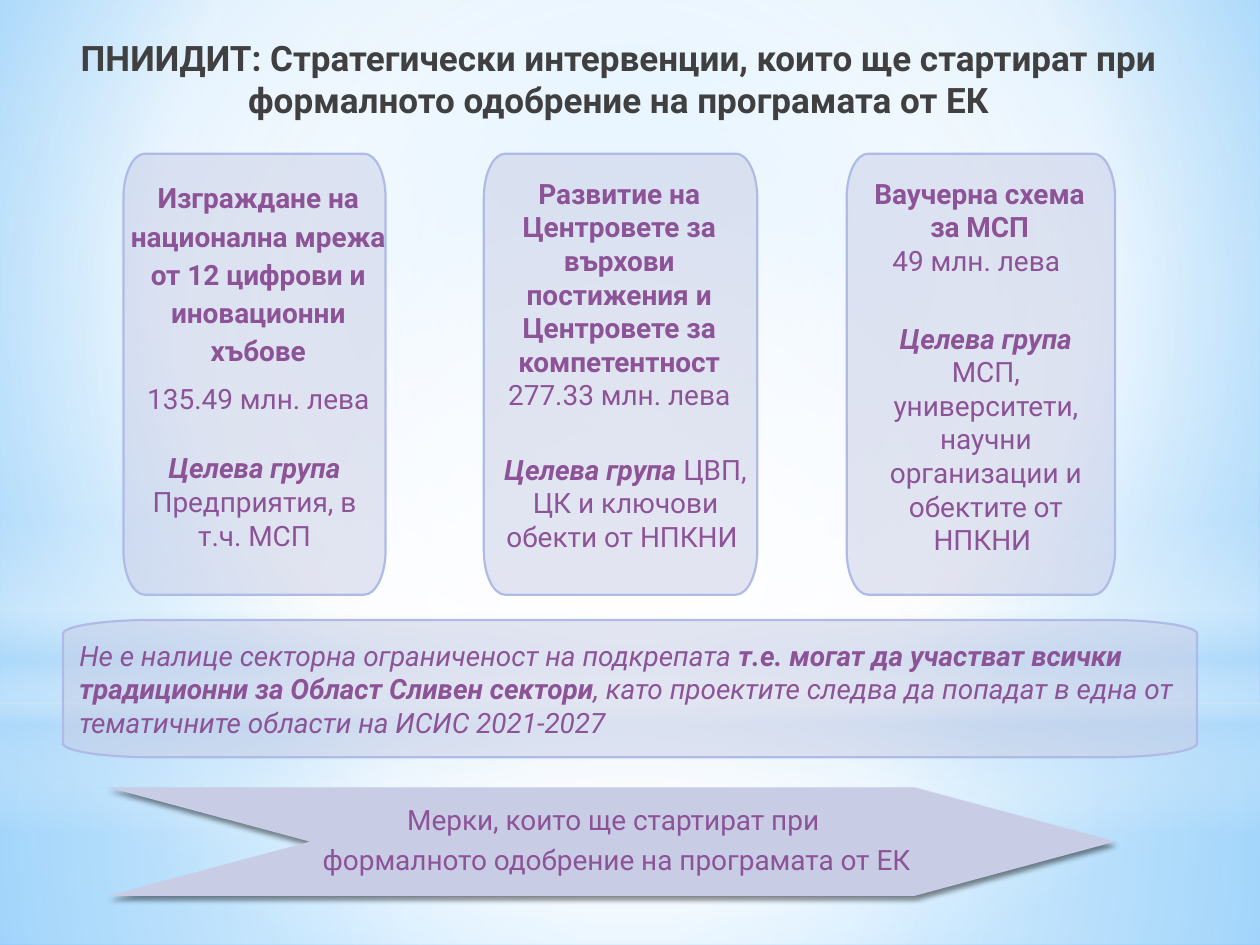
import pptx
import pptx.util
import pptx.dml.color
import pptx.enum.shapes
import pptx.enum.text
import pptx.oxml
import pptx.oxml.ns

Inches, Pt = pptx.util.Inches, pptx.util.Pt
SHAPE = pptx.enum.shapes.MSO_SHAPE
ALIGN = pptx.enum.text.PP_ALIGN
ANCHOR = pptx.enum.text.MSO_ANCHOR
AUTO = pptx.enum.text.MSO_AUTO_SIZE

COLORS = {"title": "404040", "text": "8D5397", "panel": "C8CDE5", "border": "AFBBE6",
          "white": "FFFFFF", "sky": "B4DCFA", "light": "9ED5FF", "deep": "5BB9FF",
          "shadow": "000000"}
FONT = "Roboto"
CENTER = (50, 50, 50, 50)
CURVE = 0.55

BACKGROUND = [(0, "light", 100), (60, "white", 100), (100, "deep", 100)]
GLOWS = [
    (SHAPE.RECTANGLE, (0, 5.58, 10, 1.92),
     [(0, "white", 91), (37, "white", 76), (100, "sky", 79)], CENTER),
    (SHAPE.RECTANGLE, (0, 0, 10, 5.58),
     [(0, "white", 89), (48, "white", 62), (100, "sky", 79)], CENTER),
    (SHAPE.RECTANGLE, (0, 4.12, 10, 2.5),
     [(0, "white", 0), (29, "white", 30), (45, "sky", 40), (55, "white", 26),
      (65, "sky", 60), (100, "white", 0)], None),
    (SHAPE.OVAL, (0, 1.75, 10, 5.58), [(0, "white", 100), (56, "white", 0)], CENTER),
]

TITLE = ("ПНИИДИТ: Стратегически интервенции, които ще стартират при "
         "формалното одобрение на програмата от ЕК")
CARD_TOP, CARD_HEIGHT = 1.22, 3.5
CARDS = [
    {"left": 0.98, "width": 2.08, "spacing": 1.14, "after": 5.6,
     "name": "Изграждане на национална мрежа от 12 цифрови и иновационни хъбове",
     "budget": "135.49 млн. лева", "name_box": (0.86, 1.35, 2.38, 2.04),
     "group": "Предприятия, в т.ч. МСП", "group_box": (0.98, 3.53, 2.08, 0.91)},
    {"left": 3.84, "width": 2.17, "spacing": 1, "after": 0,
     "name": "Развитие на Центровете за върхови постижения и Центровете за компетентност",
     "budget": "277.33 млн. лева", "name_box": (3.83, 1.35, 2.17, 1.99),
     "group": "ЦВП, ЦК и ключови обекти от НПКНИ ", "group_box": (3.88, 3.54, 2.17, 1.18)},
    {"left": 6.72, "width": 2.13, "spacing": 1, "after": 0,
     "name": "Ваучерна схема за МСП",
     "budget": "49 млн. лева ", "name_box": (6.83, 1.35, 1.89, 0.91),
     "group": "МСП, университети, научни организации и обектите от НПКНИ ",
     "group_box": (6.76, 2.5, 2.13, 1.99)},
]
GROUP_LABEL = "Целева група "
NOTE = [("Не е налице секторна ограниченост на подкрепата ", False, True),
        ("т.е. могат да участват всички традиционни за Област Сливен сектори", True, True),
        (", като проектите следва да попадат в една от тематичните области на ИСИС 2021-2027",
         False, True)]
ARROW_LINES = ["Мерки, които ще стартират при ", "формалното одобрение на програмата от ЕК"]
ARROW = [(0.86, 6.25), (7.26, 6.25), (8.85, 6.68), (7.26, 7.11), (0.86, 7.11), (2.46, 6.68)]


def color(name):
    return pptx.dml.color.RGBColor.from_string(COLORS[name])


def drawing(xml):
    tag, rest = xml[1:].split(">", 1)
    closed = "/" if tag.endswith("/") else ""
    return pptx.oxml.parse_xml(
        f'<{tag.rstrip("/")} {pptx.oxml.ns.nsdecls("a")}{closed}>{rest}')


def replace_solid(parent, stops, focus):
    stop_xml = "".join(
        f'<a:gs pos="{place * 1000}"><a:srgbClr val="{COLORS[name]}">'
        f'<a:alpha val="{alpha * 1000}"/></a:srgbClr></a:gs>' for place, name, alpha in stops)
    if focus:
        left, top, right, bottom = (side * 1000 for side in focus)
        direction = (f'<a:path path="circle"><a:fillToRect l="{left}" t="{top}" '
                     f'r="{right}" b="{bottom}"/></a:path>')
    else:
        direction = '<a:lin ang="5400000" scaled="0"/>'
    parent.replace(parent.find(pptx.oxml.ns.qn("a:solidFill")), drawing(
        f'<a:gradFill rotWithShape="1"><a:gsLst>{stop_xml}</a:gsLst>{direction}</a:gradFill>'))


def add_outline(page, points):
    corners = [(Inches(x), Inches(y)) for x, y in points]
    builder = page.shapes.build_freeform(*corners[0], scale=1.0)
    builder.add_line_segments(corners[1:], close=True)
    shape = builder.convert_to_shape()
    shape.shadow.inherit = False
    shape.fill.solid()
    shape.fill.fore_color.rgb = color("panel")
    return shape


def add_panel(page, left, top, width, height, radius_x, radius_y):
    right, bottom = left + width, top + height
    points = [(left, top + radius_y), (left + radius_x, top),
              (right - radius_x, top), (right, top + radius_y),
              (right, bottom - radius_y), (right - radius_x, bottom),
              (left + radius_x, bottom), (left, bottom - radius_y)]
    panel = add_outline(page, points)
    lines = panel.element.xpath(".//a:path/a:lnTo")
    corners = [(left, top), (right, top), (right, bottom), (left, bottom)]
    for index, corner in enumerate(corners):
        start, end = points[2 * index], points[2 * index + 1]
        controls = [tuple(a + CURVE * (c - a) for a, c in zip(point, corner))
                    for point in (start, end)]
        point_xml = "".join(f'<a:pt x="{Inches(x - left)}" y="{Inches(y - top)}"/>'
                            for x, y in controls + [end])
        line = lines[2 * index]
        line.getparent().replace(line, drawing(f"<a:cubicBezTo>{point_xml}</a:cubicBezTo>"))
    fill_color = panel.element.spPr.find(pptx.oxml.ns.qn("a:solidFill"))[0]
    fill_color.append(drawing('<a:alpha val="50000"/>'))
    panel.line.color.rgb = color("border")
    panel.line.width = Pt(1.25)
    return panel


def write(frame, paragraphs, align=ALIGN.CENTER, spacing=1, after=0, size=16, tint="text"):
    frame.word_wrap = True
    for index, spans in enumerate(paragraphs):
        para = frame.add_paragraph() if index else frame.paragraphs[0]
        para.alignment = align
        para.line_spacing = spacing
        para.space_before = Pt(0)
        para.space_after = Pt(after)
        for text, bold, italic in spans:
            span = para.add_run()
            span.text = text
            span.font.name = FONT
            span.font.size = Pt(size)
            span.font.bold = bold
            span.font.italic = italic
            span.font.color.rgb = color(tint)


def set_margins(frame, left, top, right, bottom):
    frame.margin_left, frame.margin_top = Inches(left), Inches(top)
    frame.margin_right, frame.margin_bottom = Inches(right), Inches(bottom)
    frame.vertical_anchor = ANCHOR.MIDDLE


def add_text(page, place, paragraphs, **style):
    box = page.shapes.add_textbox(*map(Inches, place))
    write(box.text_frame, paragraphs, **style)
    box.text_frame.auto_size = AUTO.SHAPE_TO_FIT_TEXT


def add_backdrop(deck, page):
    page.background.fill.solid()
    page.background.fill.fore_color.rgb = color("white")
    replace_solid(page.element.xpath("./p:cSld/p:bg/p:bgPr")[0], BACKGROUND, (20, 10, 20, 60))
    master_tree = deck.slide_master.element.xpath("./p:cSld/p:spTree")[0]
    for index, (kind, place, stops, focus) in enumerate(GLOWS):
        glow = page.shapes.add_shape(kind, *map(Inches, place))
        glow.shadow.inherit = False
        glow.line.fill.background()
        glow.fill.solid()
        replace_solid(glow.element.spPr, stops, focus)
        master_tree.insert(2 + index, glow.element)


def main():
    deck = pptx.Presentation()
    deck.slide_width, deck.slide_height = Inches(10), Inches(7.5)
    page = deck.slides.add_slide(deck.slide_layouts[5])
    add_backdrop(deck, page)

    title = page.shapes.title
    title.left, title.top, title.width, title.height = map(Inches, (0, 0.24, 9.82, 0.79))
    write(title.text_frame, [[(TITLE, True, False)]], size=20, tint="title")
    title.text_frame.auto_size = AUTO.NONE
    title.text_frame.vertical_anchor = ANCHOR.TOP

    first, middle, last = CARDS
    for card in (middle, first, last):
        panel = add_panel(page, card["left"], CARD_TOP, card["width"], CARD_HEIGHT, 0.17, 0.35)
        if card is middle:
            panel.element.addnext(title.element)

    arrow = add_outline(page, ARROW)
    arrow.line.fill.background()
    arrow.element.spPr.find(pptx.oxml.ns.qn("a:effectLst")).append(drawing(
        f'<a:outerShdw blurRad="{Pt(3.1)}" dist="{Pt(1.8)}" dir="5400000" rotWithShape="0">'
        f'<a:srgbClr val="{COLORS["shadow"]}"><a:alpha val="45000"/></a:srgbClr></a:outerShdw>'))
    set_margins(arrow.text_frame, 0.79, 0.04, 0.71, 0.04)
    write(arrow.text_frame, [[(line, False, False)] for line in ARROW_LINES],
          spacing=0.9, after=5.6)

    for card in CARDS:
        add_text(page, card["name_box"],
                 [[(card["name"], True, False)], [(card["budget"], False, False)]],
                 spacing=card["spacing"], after=card["after"])
        add_text(page, card["group_box"],
                 [[(GROUP_LABEL, True, True), (card["group"], False, False)]])

    note = add_panel(page, 0.5, 4.92, 9, 1.09, 0.72, 0.11)
    set_margins(note.text_frame, 0.13, 0.13, 0.13, 0.13)
    write(note.text_frame, [NOTE], align=ALIGN.LEFT)

    deck.save("out.pptx")


if __name__ == "__main__":
    main()
